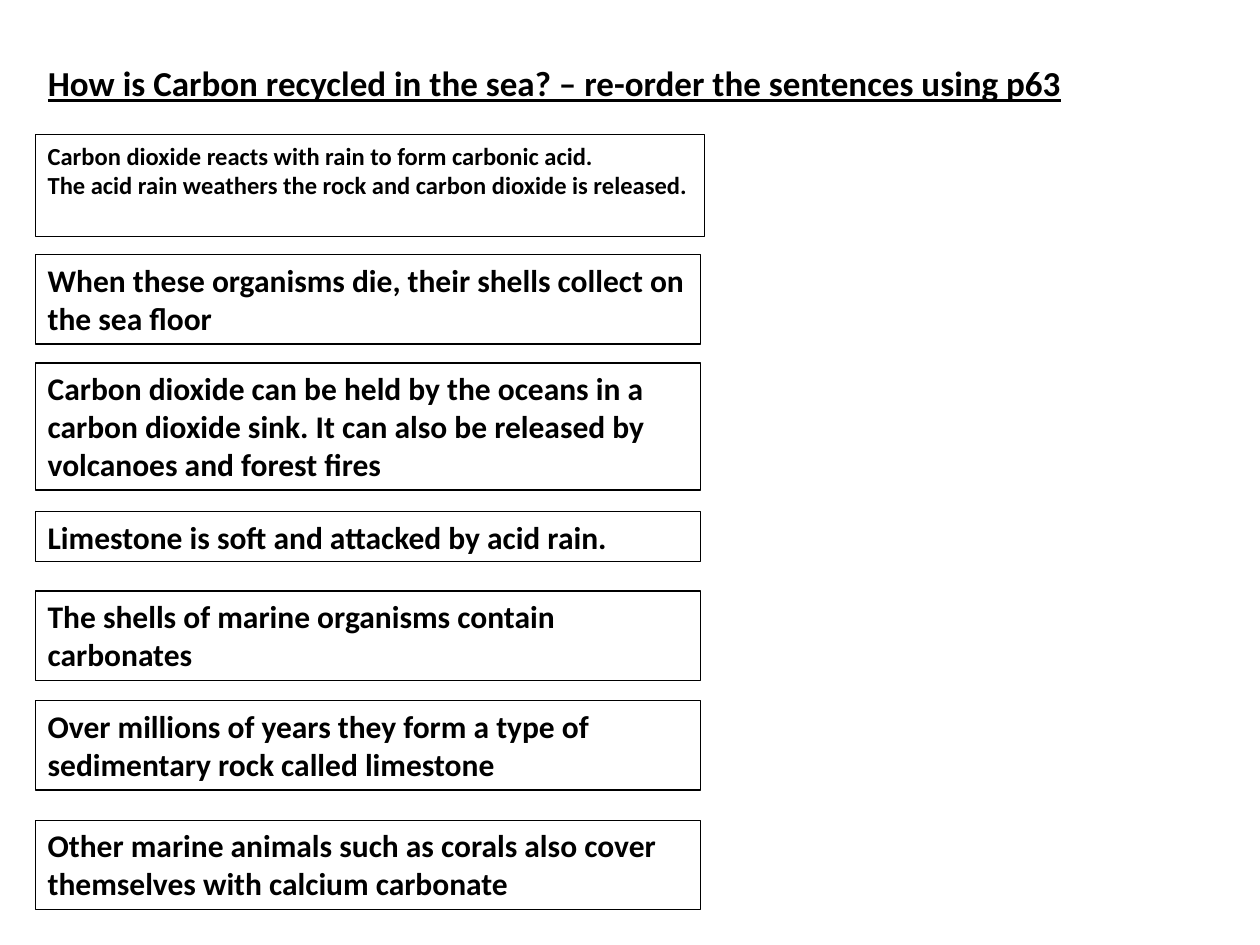
"""Build a slide of boxed sentences about carbon in the sea, to be put in order."""
from pptx import Presentation, util as u
from pptx.dml.color import RGBColor
from pptx.enum import shapes, text

INK = "000000"


def color(value):
    return RGBColor.from_string(value)


def write(sp, lines, size, underline=None):
    tf = sp.text_frame
    tf.auto_size = text.MSO_AUTO_SIZE.NONE
    tf.vertical_anchor = text.MSO_ANCHOR.TOP
    for i, line in enumerate(lines):
        p = tf.add_paragraph() if i else tf.paragraphs[0]
        p.alignment = text.PP_ALIGN.LEFT
        r = p.add_run()
        r.text = line
        r.font.name, r.font.size = "Calibri", u.Pt(size)
        r.font.bold, r.font.underline = True, underline
        r.font.color.rgb = color(INK)
    return tf


prs = Presentation()
prs.slide_width, prs.slide_height = u.Inches(10), u.Inches(7.5)
s = prs.slides.add_slide(prs.slide_layouts[5])
left = u.Inches(0.28)
column = u.Inches(5.28)

title = s.shapes.title
title.left, title.top = left, u.Inches(0.44)
title.width, title.height = u.Inches(8.31), u.Inches(0.44)
write(title, ["How is Carbon recycled in the sea? – re-order the sentences using p63"],
      20, True).word_wrap = False

row_heights = {1: 0.4, 2: 0.71, 3: 1.01}
sentences = [
    (2.02, 2, "When these organisms die, their shells collect on the sea floor"),
    (2.88, 3, "Carbon dioxide can be held by the oceans in a carbon dioxide sink. "
              "It can also be released by volcanoes and forest fires"),
    (4.06, 1, "Limestone is soft and attacked by acid rain."),
    (4.69, 2, "The shells of marine organisms contain carbonates"),
    (5.56, 2, "Over millions of years they form a type of sedimentary rock called limestone"),
    (6.51, 2, "Other marine animals such as corals also cover themselves with calcium carbonate"),
]
boxes = [(1.07, u.Inches(5.31), 0.81, 14,
          ["Carbon dioxide reacts with rain to form carbonic acid.",
           "The acid rain weathers the rock and carbon dioxide is released."])]
boxes += [(top, column, row_heights[rows], 18, [line]) for top, rows, line in sentences]

for top, width, height, size, lines in boxes:
    sp = s.shapes.add_shape(shapes.MSO_SHAPE.RECTANGLE, left, u.Inches(top),
                            width, u.Inches(height))
    sp.shadow.inherit = False
    sp.fill.background()
    sp.line.color.rgb = color(INK)
    sp.line.width = u.Pt(0.75)
    write(sp, lines, size).word_wrap = True

prs.save("out.pptx")
